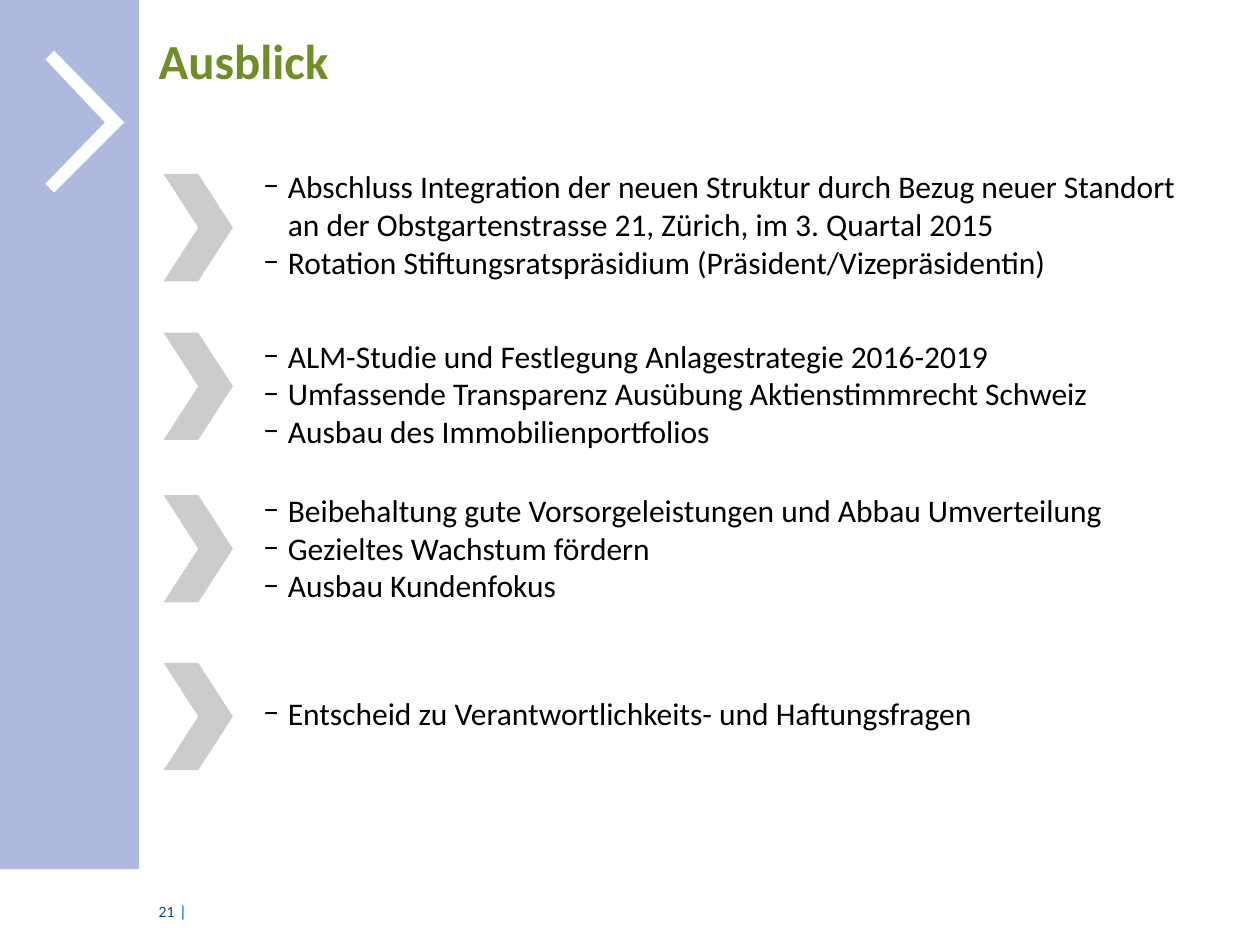
from lxml import etree
from pptx import Presentation
from pptx import util as u
from pptx.dml.color import RGBColor
from pptx.enum import shapes, text
from pptx.oxml.ns import qn


def colour(value):
    return RGBColor.from_string(value)


class SlideBuilder:
    font = "Calibri"
    green = "708E27"
    blue = "004A99"
    lavender = "AEB9DD"
    grey = "CCCCCC"
    white = "FFFFFF"
    black = "000000"

    def __init__(self, slide):
        self.slide = slide

    def paint(self, shape, fill):
        shape.shadow.inherit = False
        shape.fill.solid()
        shape.fill.fore_color.rgb = colour(fill)
        shape.line.fill.background()

    def preset(self, kind, left, top, width, height, fill):
        shape = self.slide.shapes.add_shape(
            kind, u.Pt(left), u.Pt(top), u.Pt(width), u.Pt(height))
        self.paint(shape, fill)

    def outline(self, points, fill):
        builder = self.slide.shapes.build_freeform(*points[0], scale=u.Pt(1))
        builder.add_line_segments(points[1:], close=True)
        self.paint(builder.convert_to_shape(), fill)

    def text(self, content, left, top, width, height, size, fill,
             bold=False, wrap=True, anchor=text.MSO_ANCHOR.TOP):
        shape = self.slide.shapes.add_textbox(
            u.Pt(left), u.Pt(top), u.Pt(width), u.Pt(height))
        frame = shape.text_frame
        frame.margin_left = frame.margin_right = 0
        frame.margin_top = frame.margin_bottom = 0
        frame.word_wrap = wrap
        frame.vertical_anchor = anchor
        frame.text = content
        for paragraph in frame.paragraphs:
            for run in paragraph.runs:
                run.font.name = self.font
                run.font.size = u.Pt(size)
                run.font.bold = bold
                run.font.color.rgb = colour(fill)
        return frame

    def bullets(self, items, left, top, width, height):
        frame = self.text("\n".join(items), left, top, width, height, 18,
                          self.black, anchor=text.MSO_ANCHOR.MIDDLE)
        for paragraph in frame.paragraphs:
            properties = paragraph._p.get_or_add_pPr()
            properties.set("marL", str(u.Pt(14)))
            properties.set("indent", str(-u.Pt(14)))
            etree.SubElement(properties, qn("a:buFont"), typeface=self.font)
            etree.SubElement(properties, qn("a:buChar"), char="−")


def main():
    presentation = Presentation()
    presentation.slide_width = u.Pt(720)
    presentation.slide_height = u.Pt(540)
    builder = SlideBuilder(
        presentation.slides.add_slide(presentation.slide_layouts[6]))

    builder.preset(shapes.MSO_SHAPE.RECTANGLE, 0, 0, 79.4, 496.6,
                   builder.lavender)
    builder.outline([(31, 29), (25.5, 34.5), (60, 69.8), (25.5, 105),
                     (31, 110.5), (70.8, 69.8)], builder.white)
    builder.text("Ausblick", 90.7, 17.3, 610, 66, 28, builder.green, bold=True)

    topics = [
        (99.4, 88.6, 544, [
            "Abschluss Integration der neuen Struktur durch Bezug neuer "
            "Standort\van der Obstgartenstrasse 21, Zürich, im 3. Quartal 2015",
            "Rotation Stiftungsratspräsidium (Präsident/Vizepräsidentin)"]),
        (190.1, 185.5, 522, [
            "ALM-Studie und Festlegung Anlagestrategie 2016-2019",
            "Umfassende Transparenz Ausübung Aktienstimmrecht Schweiz",
            "Ausbau des Immobilienportfolios"]),
        (282.9, 273.6, 499, [
            "Beibehaltung gute Vorsorgeleistungen und Abbau Umverteilung",
            "Gezieltes Wachstum fördern",
            "Ausbau Kundenfokus"]),
        (378.8, 368, 510.5, [
            "Entscheid zu Verantwortlichkeits- und Haftungsfragen"]),
    ]
    for chevron_top, text_top, width, items in topics:
        builder.preset(shapes.MSO_SHAPE.CHEVRON, 93.5, chevron_top, 39.6, 61.3,
                       builder.grey)
        builder.bullets(items, 150.5, text_top, width, 78.5)

    builder.text("21", 90.7, 515.5, 11.5, 13.7, 9, builder.blue, wrap=False)
    builder.text("|", 102.5, 515, 8, 15, 9, builder.blue, wrap=False)
    presentation.save("out.pptx")


if __name__ == "__main__":
    main()
